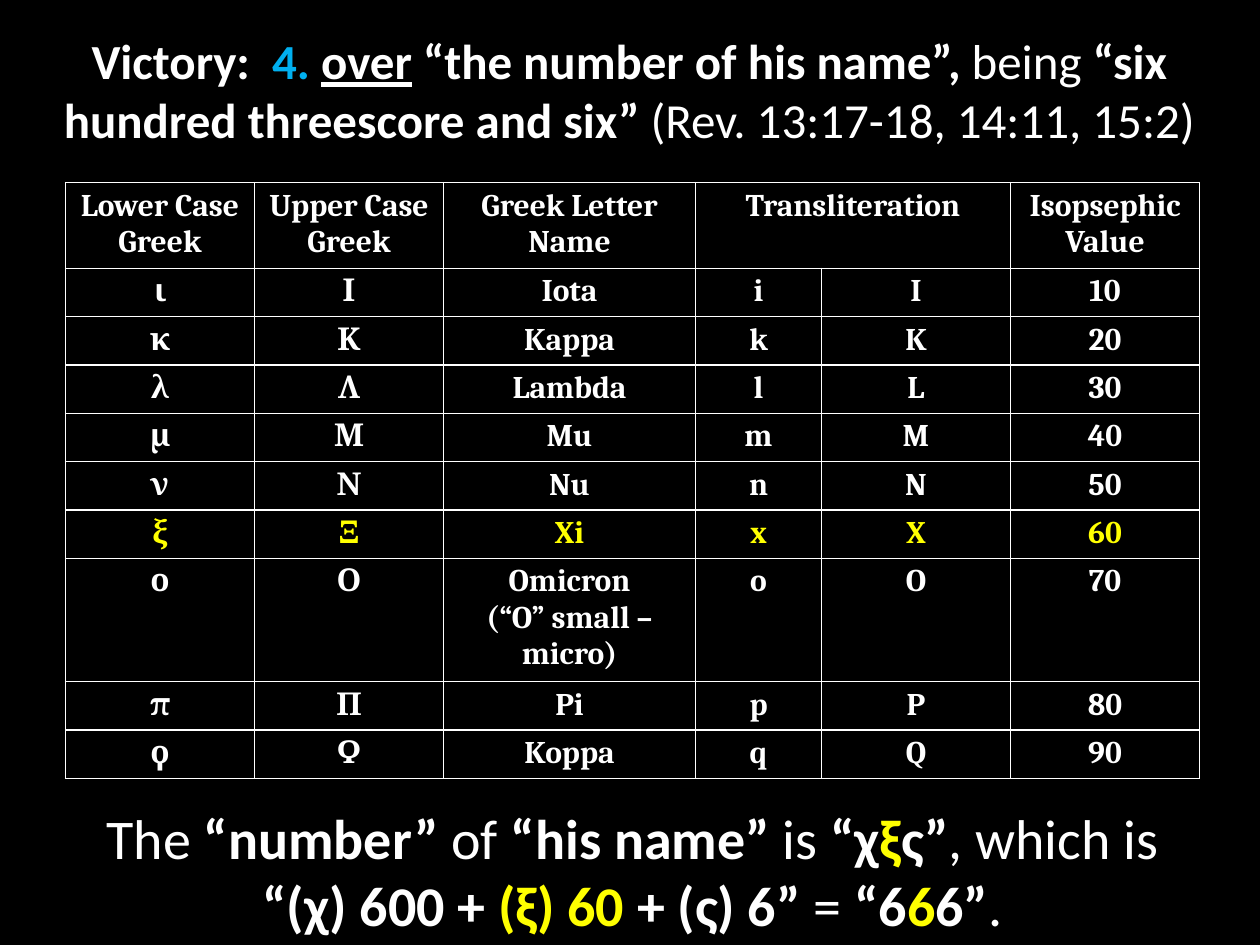
from lxml import etree
from pptx import Presentation
from pptx.dml.color import RGBColor
from pptx.enum.text import MSO_ANCHOR, MSO_AUTO_SIZE, PP_ALIGN
from pptx.oxml import parse_xml
from pptx.oxml.ns import nsdecls
from pptx.util import Inches, Pt

BLACK = RGBColor(0x00, 0x00, 0x00)
WHITE = RGBColor(0xFF, 0xFF, 0xFF)
YELLOW = RGBColor(0xFF, 0xFF, 0x00)
BLUE = RGBColor(0x00, 0xB0, 0xF0)


def add_runs(paragraph, runs, size, font_name):
    """Add centred runs, each given as (text, bold, colour)."""
    paragraph.alignment = PP_ALIGN.CENTER
    for text, bold, color in runs:
        run = paragraph.add_run()
        run.text = text
        run.font.name = font_name
        run.font.size = Pt(size)
        run.font.bold = bold
        run.font.color.rgb = color


def add_borders(cell, color):
    """Draw a 1 pt line on all four sides of a table cell."""
    properties = cell._tc.get_or_add_tcPr()
    for side in ("lnL", "lnR", "lnT", "lnB"):
        properties.append(parse_xml(
            f'<a:{side} {nsdecls("a")} w="12700"><a:solidFill>'
            f'<a:srgbClr val="{color}"/></a:solidFill></a:{side}>'))


presentation = Presentation()
presentation.slide_width = Inches(10)
presentation.slide_height = Inches(7.5)
slide = presentation.slides.add_slide(presentation.slide_layouts[5])
slide.background.fill.solid()
slide.background.fill.fore_color.rgb = BLACK

# Title
title = slide.shapes.title
title.left, title.top = Inches(0.08), Inches(0.25)
title.width, title.height = Inches(9.83), Inches(0.92)
title.text_frame.vertical_anchor = MSO_ANCHOR.MIDDLE
title.text_frame.word_wrap = True
title.text_frame.auto_size = MSO_AUTO_SIZE.NONE
title_paragraph = title.text_frame.paragraphs[0]
add_runs(title_paragraph, [
    ("Victory:  ", True, WHITE),
    ("4. ", True, BLUE),
    ("over", True, WHITE),
    (" ", False, WHITE),
    ("“the number of his name”,", True, WHITE),
    (" being ", False, WHITE),
    ("“six hundred threescore and six”", True, WHITE),
    (" (Rev. 13:17-18, 14:11, 15:2)", False, WHITE),
], 28, "Calibri")
title_paragraph.runs[2].font.underline = True

# Sum of the letter values
conclusion = slide.shapes.add_textbox(
    Inches(0.21), Inches(6.33), Inches(9.62), Inches(1.18))
conclusion_frame = conclusion.text_frame
conclusion_frame.word_wrap = True
conclusion_frame.auto_size = MSO_AUTO_SIZE.SHAPE_TO_FIT_TEXT
add_runs(conclusion_frame.paragraphs[0], [
    ("The ", False, WHITE),
    ("“number”", True, WHITE),
    (" of ", False, WHITE),
    ("“his name”", True, WHITE),
    (" is ", False, WHITE),
    ("“χ", True, WHITE),
    ("ξ", True, YELLOW),
    ("ς”", True, WHITE),
    (", which is", False, WHITE),
], 32, "Calibri")
add_runs(conclusion_frame.add_paragraph(), [
    ("“(χ) 600 + ", True, WHITE),
    ("(ξ) 60", True, YELLOW),
    (" + (ς) 6”", True, WHITE),
    (" = ", False, WHITE),
    ("“6", True, WHITE),
    ("6", True, YELLOW),
    ("6”", True, WHITE),
    (".", False, WHITE),
], 32, "Calibri")

# Letter table: each Greek letter, its name and its Latin letter
letters = [
    ("ι", "Iota", "i"),
    ("κ", "Kappa", "k"),
    ("λ", "Lambda", "l"),
    ("μ", "Mu", "m"),
    ("ν", "Nu", "n"),
    ("ξ", "Xi", "x"),
    ("ο", "Omicron\n(“O” small – micro)", "o"),
    ("π", "Pi", "p"),
    ("ϙ", "Koppa", "q"),
]
rows = [("Lower Case Greek", "Upper Case Greek", "Greek Letter Name",
         "Transliteration", "", "Isopsephic Value")]
for position, (greek, name, latin) in enumerate(letters, start=1):
    rows.append((greek, greek.upper(), name, latin, latin.upper(),
                 str(10 * position)))

column_widths = [1.5, 1.5, 2, 1, 1.5, 1.5]
table_height, header_height, omicron_height = 4.73, 0.68, 0.98
letter_height = (table_height - header_height - omicron_height) / 8

table = slide.shapes.add_table(
    len(rows), len(column_widths), Inches(0.52), Inches(1.45),
    Inches(sum(column_widths)), Inches(table_height)).table
table.first_row = False
table.horz_banding = False
for column, width in zip(table.columns, column_widths):
    column.width = Inches(width)

for row_index, values in enumerate(rows):
    row_height = letter_height
    if row_index == 0:
        row_height = header_height
    elif "Omicron" in values[2]:
        row_height = omicron_height
    table.rows[row_index].height = Inches(row_height)
    color = YELLOW if values[2] == "Xi" else WHITE
    for column_index, value in enumerate(values):
        cell = table.cell(row_index, column_index)
        cell.margin_left = cell.margin_right = Inches(0.04)
        cell.margin_top = cell.margin_bottom = Inches(0.04)
        add_borders(cell, WHITE)
        cell.fill.background()
        cell.text_frame.text = value
        for paragraph in cell.text_frame.paragraphs:
            paragraph.alignment = PP_ALIGN.CENTER
            for run in paragraph.runs:
                run.font.name = "Cambria"
                run.font.size = Pt(18)
                run.font.bold = True
                run.font.color.rgb = color
table.cell(0, 3).merge(table.cell(0, 4))

presentation.save("out.pptx")
